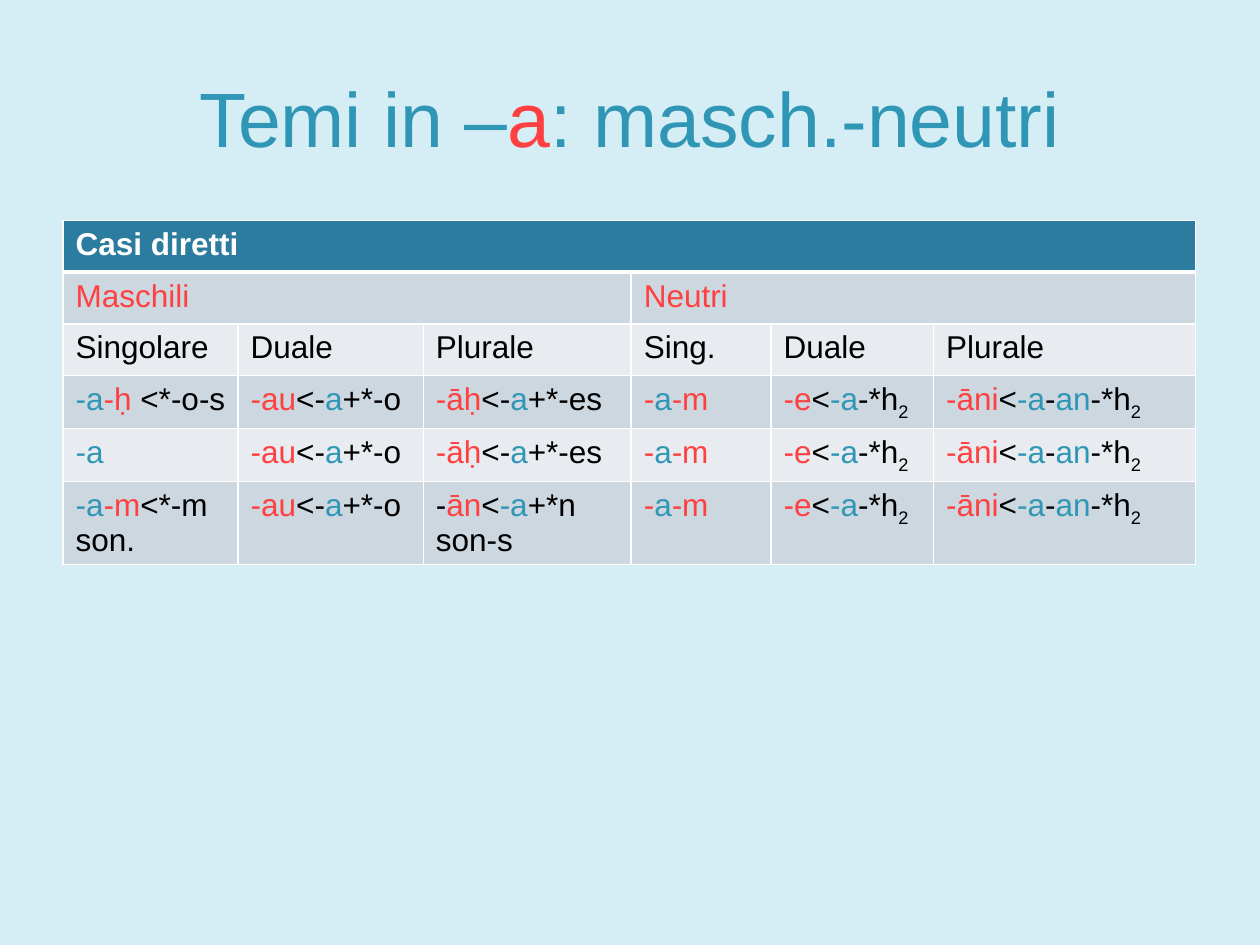
from dataclasses import dataclass

from lxml import etree
from pptx import Presentation
from pptx.dml.color import RGBColor
from pptx.enum.text import MSO_ANCHOR, PP_ALIGN
from pptx.oxml.ns import qn
from pptx.util import Inches, Pt

CENTER, MIDDLE = PP_ALIGN.CENTER, MSO_ANCHOR.MIDDLE
TITLE_ONLY = 5


@dataclass(frozen=True)
class Theme:
    font: str = "Arial"
    title_size: int = 44
    table_size: int = 18
    background: str = "D5EDF4"
    header: str = "2C7C9F"
    bands: tuple = ("CDD7DF", "E8ECF0")
    blue: str = "2F97B5"
    red: str = "FF4040"
    black: str = "000000"
    white: str = "FFFFFF"
    line: int = 1
    header_line: int = 3


THEME = Theme()
BLUE, RED, BLACK, WHITE = THEME.blue, THEME.red, THEME.black, THEME.white
SUB = "sub"

# Content: each text is a list of (words, colour[, SUB])
TITLE = [("Temi in –", BLUE), ("a", RED), (": masch.-neutri", BLUE)]
NUMBERS = ["Singolare", "Duale", "Plurale", "Sing.", "Duale", "Plurale"]

DUAL = [("-au", RED), ("<-", BLACK), ("a", BLUE), ("+*-o", BLACK)]
PLURAL = [("-āḥ", RED), ("<-", BLACK), ("a", BLUE), ("+*-es", BLACK)]
LARYNGEAL = [("-*h", BLACK), ("2", BLACK, SUB)]
NEUTER = [
    [("-", RED), ("a", BLUE), ("-m", RED)],
    [("-e", RED), ("<", BLACK), ("-a", BLUE), *LARYNGEAL],
    [("-āni", RED), ("<", BLACK), ("-a", BLUE), ("-", BLACK), ("an", BLUE), *LARYNGEAL],
]
NOMINATIVE = [("-a", BLUE), ("-ḥ ", RED), ("<*-o-s", BLACK)]
VOCATIVE = [("-a", BLUE)]
ACCUSATIVE = [("-a", BLUE), ("-m", RED), ("<*-m son.", BLACK)]
ACCUSATIVE_PLURAL = [("-", BLACK), ("ān", RED), ("<", BLACK), ("-a", BLUE),
                     ("+*n son-s", BLACK)]

# None marks a cell covered by the merged cell to its left
ROWS = [
    [[("Casi diretti", WHITE)]] + [None] * 5,
    [[("Maschili", RED)], None, None, [("Neutri", RED)], None, None],
    [[(number, BLACK)] for number in NUMBERS],
    [NOMINATIVE, DUAL, PLURAL, *NEUTER],
    [VOCATIVE, DUAL, PLURAL, *NEUTER],
    [ACCUSATIVE, DUAL, ACCUSATIVE_PLURAL, *NEUTER],
]

# Layout, in inches
PAGE_WIDTH, PAGE_HEIGHT, MARGIN = 10, 7.5, 0.5
CONTENT_WIDTH = PAGE_WIDTH - 2 * MARGIN
TITLE_TOP, TITLE_HEIGHT = 0.3, 1.25
TABLE_TOP, ROW_HEIGHT = 1.75, 0.41
COLUMN_WIDTHS = [1.39, 1.47, 1.65, 1.11, 1.29, 2.08]


def write(frame, spans, size, bold=False):
    para = frame.paragraphs[0]
    para.font.name, para.font.size, para.font.bold = THEME.font, Pt(size), bold
    for words, colour, *marks in spans:
        span = para.add_run()
        span.text = words
        span.font.color.rgb = RGBColor.from_string(colour)
        if SUB in marks:
            span.font._element.set("baseline", "-25000")
    return para


def draw_borders(cell, row):
    properties = cell._tc.get_or_add_tcPr()
    heavy_side = {0: "lnB", 1: "lnT"}.get(row)
    for side in ("lnL", "lnR", "lnT", "lnB"):
        width = THEME.header_line if side == heavy_side else THEME.line
        line = etree.SubElement(properties, qn(f"a:{side}"), w=str(Pt(width)))
        fill = etree.SubElement(line, qn("a:solidFill"))
        etree.SubElement(fill, qn("a:srgbClr"), val=WHITE)


def add_title(page):
    title = page.shapes.title
    title.left, title.top = Inches(MARGIN), Inches(TITLE_TOP)
    title.width, title.height = Inches(CONTENT_WIDTH), Inches(TITLE_HEIGHT)
    title.text_frame.vertical_anchor = MIDDLE
    write(title.text_frame, TITLE, THEME.title_size).alignment = CENTER


def add_case_table(page):
    table = page.shapes.add_table(
        len(ROWS), len(COLUMN_WIDTHS), Inches(MARGIN), Inches(TABLE_TOP),
        Inches(CONTENT_WIDTH), Inches(ROW_HEIGHT * len(ROWS))).table
    table.first_row = table.horz_banding = False
    for column, width in zip(table.columns, COLUMN_WIDTHS):
        column.width = Inches(width)

    for r, row in enumerate(ROWS):
        table.rows[r].height = Inches(ROW_HEIGHT)
        colour = THEME.bands[(r - 1) % 2] if r else THEME.header
        for c, spans in enumerate(row):
            cell = table.cell(r, c)
            draw_borders(cell, r)
            cell.fill.solid()
            cell.fill.fore_color.rgb = RGBColor.from_string(colour)
            if spans:
                write(cell.text_frame, spans, THEME.table_size, bold=r == 0)

    # Merged headings
    table.cell(0, 0).merge(table.cell(0, 5))
    for first in (0, 3):
        table.cell(1, first).merge(table.cell(1, first + 2))


def main():
    deck = Presentation()
    deck.slide_width, deck.slide_height = Inches(PAGE_WIDTH), Inches(PAGE_HEIGHT)
    page = deck.slides.add_slide(deck.slide_layouts[TITLE_ONLY])
    page.background.fill.solid()
    page.background.fill.fore_color.rgb = RGBColor.from_string(THEME.background)
    add_title(page)
    add_case_table(page)
    deck.save("out.pptx")


if __name__ == "__main__":
    main()
